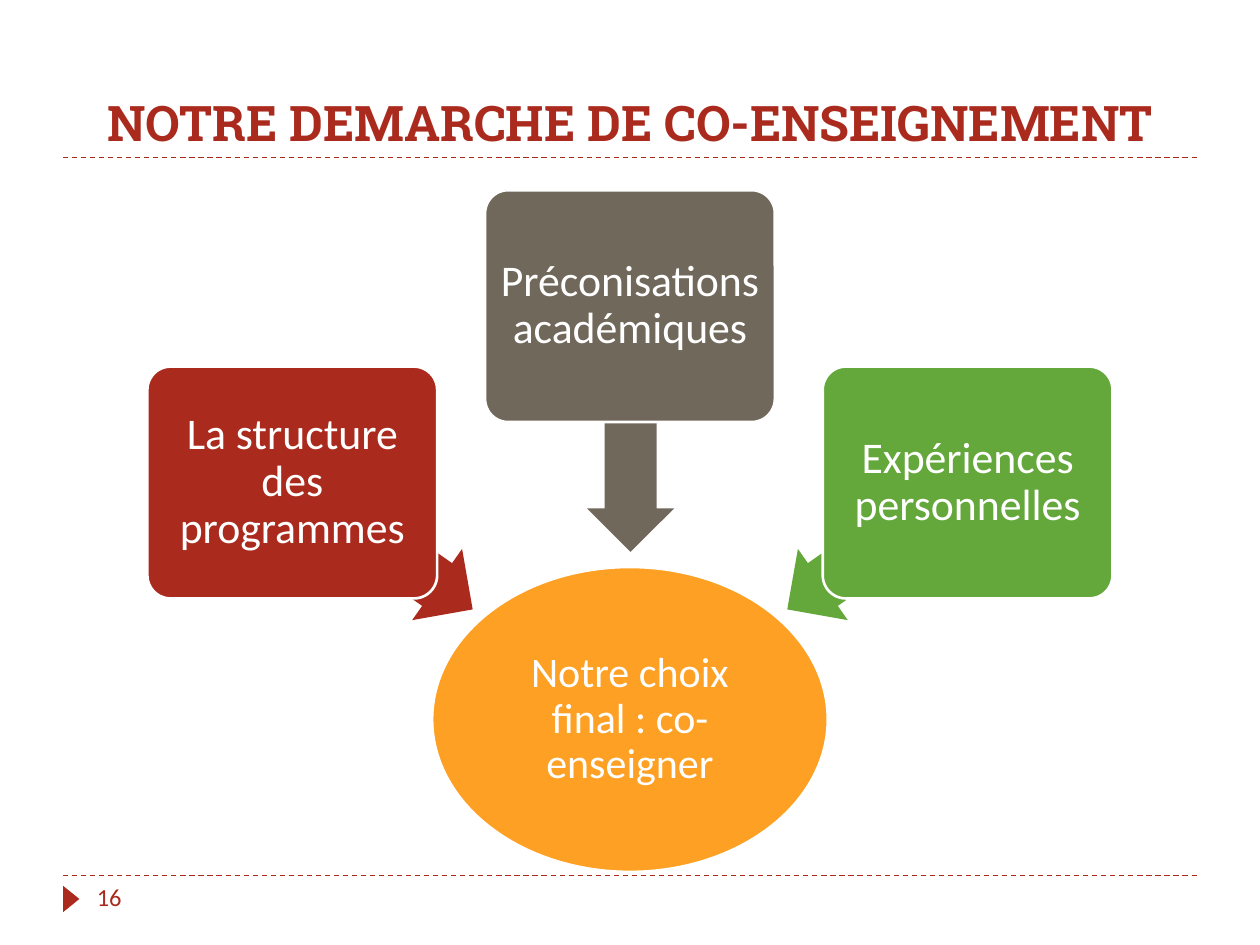
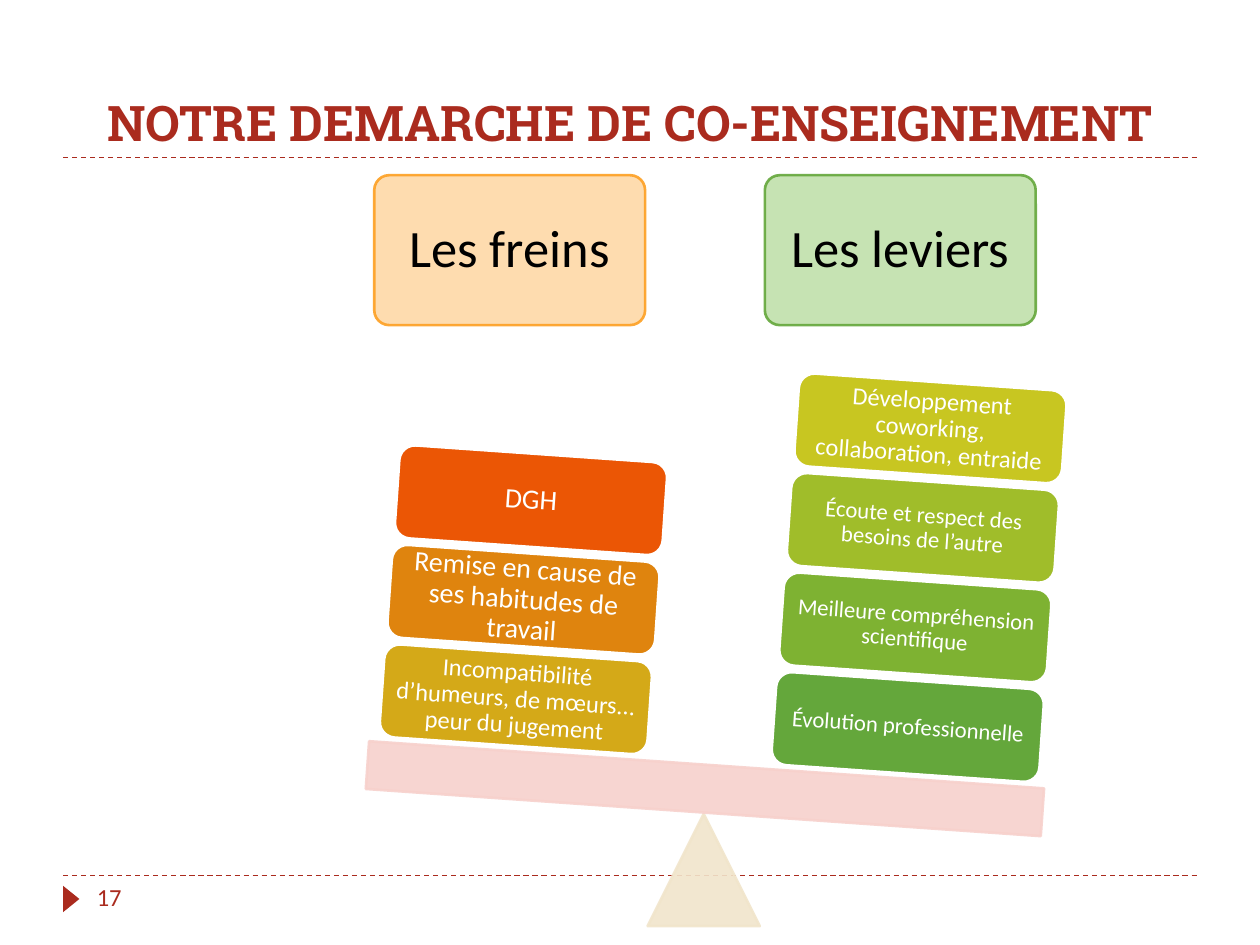
from lxml import etree
from pptx import Presentation
from pptx.dml.color import RGBColor
from pptx.enum import dml, shapes, text
from pptx.oxml import ns
from pptx.util import Inches, Pt

C = {
    "red": "AA2B1E", "grey": "71685C", "green": "64A73B", "orange": "FDA023",
    "pale_orange": "FED9A7", "pale_green": "C0E1AB", "pale_red": "F7D1CC",
    "sand": "F1E5CB", "white": "FFFFFF", "black": "000000",
    "lime": "7EB232", "olive": "A0BD2A", "yellow": "C8C621",
    "gold": "D4A918", "amber": "DF840E", "vermilion": "EB5605",
}
TITLE = "NOTRE DEMARCHE DE CO-ENSEIGNEMENT"
S = shapes.MSO_SHAPE


def write(sp, words, size, color, anchor, inset=(0.1, 0.05), font="Calibri",
          align=text.PP_ALIGN.CENTER, spacing=None):
    """Set one paragraph; inset is (sides, top and bottom) in inches."""
    tf = sp.text_frame
    tf.word_wrap = True
    tf.vertical_anchor = anchor
    tf.margin_left = tf.margin_right = Inches(inset[0])
    tf.margin_top = tf.margin_bottom = Inches(inset[1])
    p = tf.paragraphs[0]
    p.text = words
    p.alignment = align
    p.line_spacing = spacing
    p.font.size = Pt(size)
    p.font.name = font
    p.font.color.rgb = RGBColor.from_string(C[color])
    return p


def draw(slide, kind, at, fill, line=None, rot=0, adj=(), alpha=None,
         words=None, size=25, color="white", inset=(0.05, 0.05)):
    """Add a filled preset shape; alpha is an opacity in percent."""
    sp = slide.shapes.add_shape(kind, *map(Inches, at))
    sp.shadow.inherit = False
    sp.rotation = rot
    for i, value in enumerate(adj):
        sp.adjustments[i] = value
    sp.fill.solid()
    sp.fill.fore_color.rgb = RGBColor.from_string(C[fill])
    if line:
        sp.line.color.rgb = RGBColor.from_string(C[line])
        sp.line.width = Pt(1.5)
    else:
        sp.line.fill.background()
    if alpha:
        for clr in sp._element.spPr.iter(ns.qn("a:srgbClr")):
            etree.SubElement(clr, ns.qn("a:alpha"), val=str(alpha * 1000))
    if words:
        write(sp, words, size, color, text.MSO_ANCHOR.MIDDLE, inset, spacing=0.9)


prs = Presentation()
prs.slide_width, prs.slide_height = Inches(10), Inches(7.5)

# Shared frame: rules, page marker, title and page number
slides = []
for number in (16, 17):
    slide = prs.slides.add_slide(prs.slide_layouts[6])
    slides.append(slide)
    for y in (6.95, 1.25):
        rule = slide.shapes.add_connector(
            shapes.MSO_CONNECTOR.STRAIGHT, Inches(0.5), Inches(y), Inches(9.5), Inches(y))
        rule.line.color.rgb = RGBColor.from_string(C["red"])
        rule.line.width = Pt(0.75)
        rule.line.dash_style = dml.MSO_LINE.DASH
        etree.SubElement(rule._element.spPr, ns.qn("a:effectLst"))
    draw(slide, S.ISOSCELES_TRIANGLE, (0.46, 7.07, 0.21, 0.13), "red", rot=90)
    title = slide.shapes.add_textbox(0, Inches(0.17), prs.slide_width, Inches(1.08))
    p = write(title, TITLE, 28, "red", text.MSO_ANCHOR.BOTTOM, font="Roboto Slab")
    p.font.bold = True
    page = slide.shapes.add_textbox(Inches(0.67), Inches(6.95), Inches(2.17), Inches(0.4))
    write(page, str(number), 14, "red", text.MSO_ANCHOR.TOP, align=text.PP_ALIGN.LEFT)

converging, balance = slides

# Three sources converging on the final choice
draw(converging, S.OVAL, (3.43, 4.5, 3.14, 2.42), "orange", "white",
     words="Notre choix final : co-enseigner", size=24, inset=(0, 0.02))
sources = [
    ("La structure des programmes", "red", (1.17, 2.91), (2.16, 3.99, 1.75), 215),
    ("Préconisations académiques", "grey", (3.85, 1.51), (4.03, 3.06, 1.95), 270),
    ("Expériences personnelles", "green", (6.53, 2.91), (6.09, 3.99, 1.75), 325),
]
for words, color, corner, arrow, angle in sources:
    draw(converging, S.LEFT_ARROW, (*arrow, 0.69), color, rot=angle, adj=(0.6, 0.5))
    draw(converging, S.ROUNDED_RECTANGLE, (*corner, 2.3, 1.84), color, "white",
         adj=(0.1,), words=words)

# Balance: headings, pivot and beam
TILT = 4
headings = [("Les freins", 2.97, "pale_orange", "orange"),
            ("Les leviers", 6.07, "pale_green", "green")]
for words, x, fill, line in headings:
    draw(balance, S.ROUNDED_RECTANGLE, (x, 1.39, 2.15, 1.19), fill, line, adj=(0.1,),
         alpha=90, words=words, size=30, color="black", inset=(0.12, 0.12))
draw(balance, S.ISOSCELES_TRIANGLE, (5.14, 6.46, 0.89, 0.89), "sand", "sand", alpha=90)
draw(balance, S.RECTANGLE, (2.91, 6.07, 5.37, 0.38), "pale_red", "pale_red",
     rot=TILT, alpha=90)

# Weights stacked from the beam upwards, leaning with the tilt
stacks = [
    (6.14, 5.4, [
        ("Évolution professionnelle", "green", 13, 0.05),
        ("Meilleure compréhension scientifique", "lime", 13, 0.05),
        ("Écoute et respect des besoins de l’autre", "olive", 13, 0.05),
        ("Développement coworking, collaboration, entraide", "yellow", 14, 0.06),
    ]),
    (3.03, 5.18, [
        ("Incompatibilité d’humeurs, de mœurs... peur du jugement", "gold", 14, 0.06),
        ("Remise en cause de ses habitudes de travail", "amber", 16, 0.07),
        ("DGH", "vermilion", 16, 0.07),
    ]),
]
for x, y, weights in stacks:
    for i, (words, fill, size, inset) in enumerate(weights):
        draw(balance, S.ROUNDED_RECTANGLE, (x + 0.06 * i, y - 0.79 * i, 2.13, 0.74),
             fill, "white", rot=TILT, words=words, size=size, inset=(inset, inset))

prs.save("out.pptx")
